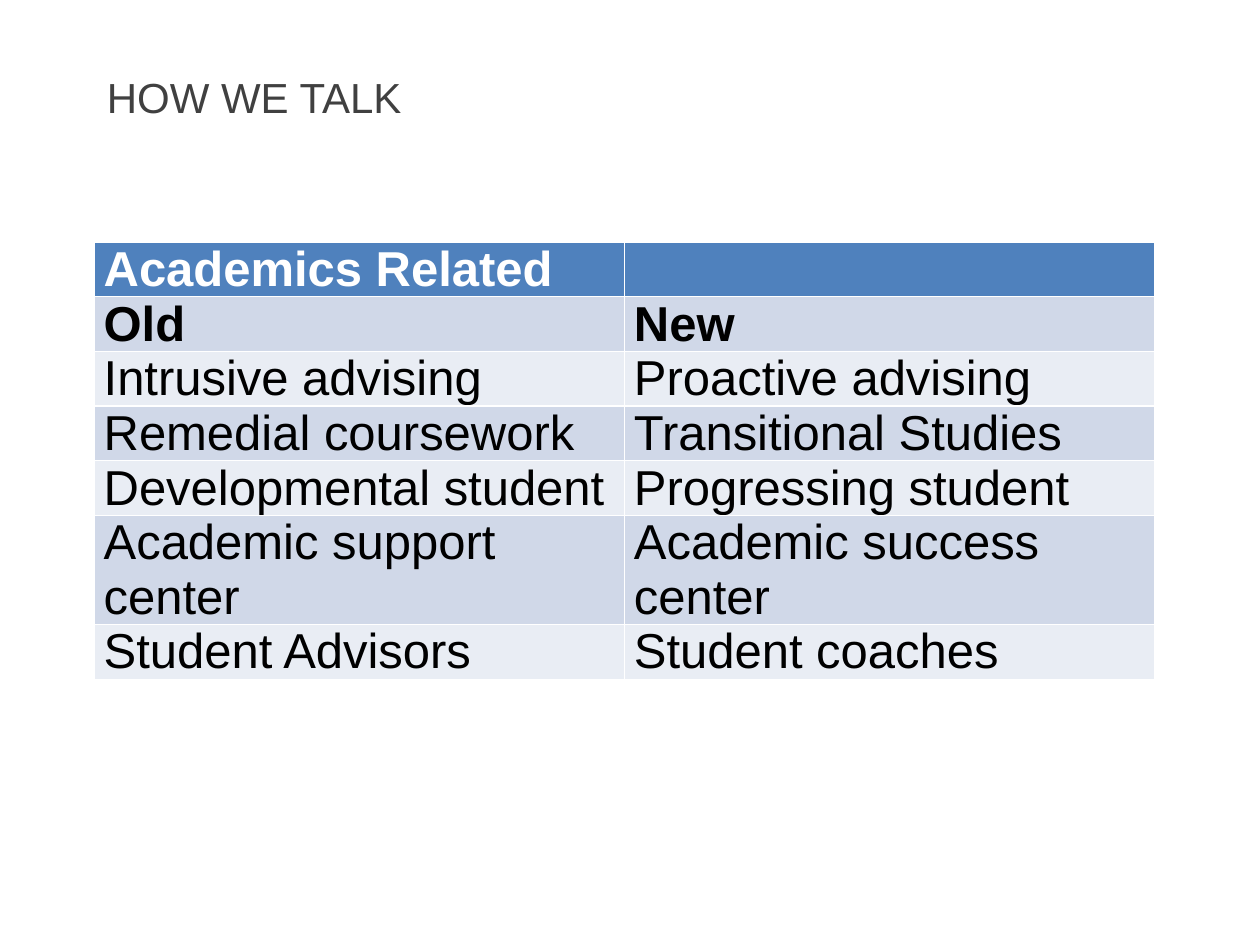
import dataclasses

import pptx
import pptx.dml.color
import pptx.enum.text
import pptx.util

Cm = pptx.util.Cm
Pt = pptx.util.Pt


@dataclasses.dataclass(frozen=True)
class Theme:
    face: str = "Arial"
    title: int = 24
    body: int = 28
    grey: str = "404040"
    white: str = "FFFFFF"
    black: str = "000000"
    head: str = "4F81BD"
    bands: tuple = ("D0D8E8", "E9EDF4")


THEME = Theme()

ROWS = [
    ("Academics Related", ""),
    ("Old", "New"),
    ("Intrusive advising", "Proactive advising"),
    ("Remedial coursework", "Transitional Studies"),
    ("Developmental student", "Progressing student"),
    ("Academic support center", "Academic success center"),
    ("Student Advisors", "Student coaches"),
]


def tint(code):
    return pptx.dml.color.RGBColor.from_string(code)


def style(para, size, color, bold=False):
    font = para.font
    font.name = THEME.face
    font.size = Pt(size)
    font.bold = bold
    font.color.rgb = tint(color)


def add_title(slide, text):
    title = slide.shapes.title
    title.left, title.top = Cm(1.9), Cm(0.84)
    title.width, title.height = Cm(18.2), Cm(2.2)
    frame = title.text_frame
    frame.text = text
    frame.vertical_anchor = pptx.enum.text.MSO_ANCHOR.MIDDLE
    para = frame.paragraphs[0]
    para.alignment = pptx.enum.text.PP_ALIGN.LEFT
    style(para, THEME.title, THEME.grey)


def fill_cell(cell, text, row):
    cell.margin_left = cell.margin_right = Cm(0.19)
    cell.margin_top = cell.margin_bottom = 0
    cell.fill.solid()
    shade = THEME.bands[(row - 1) % 2] if row else THEME.head
    cell.fill.fore_color.rgb = tint(shade)
    if text:
        cell.text = text
        ink = THEME.black if row else THEME.white
        style(cell.text_frame.paragraphs[0], THEME.body, ink, row < 2)


def add_grid(slide, rows):
    count = len(rows)
    frame = slide.shapes.add_table(
        count, 2, Cm(1.9), Cm(4.88), Cm(21.38), Cm(1.04) * count
    )
    for row, texts in enumerate(rows):
        for col, text in enumerate(texts):
            fill_cell(frame.table.cell(row, col), text, row)


def main():
    deck = pptx.Presentation()
    deck.slide_width, deck.slide_height = Cm(25.4), Cm(19.05)
    slide = deck.slides.add_slide(deck.slide_layouts[5])
    add_title(slide, "HOW WE TALK")
    add_grid(slide, ROWS)
    deck.save("out.pptx")


if __name__ == "__main__":
    main()
